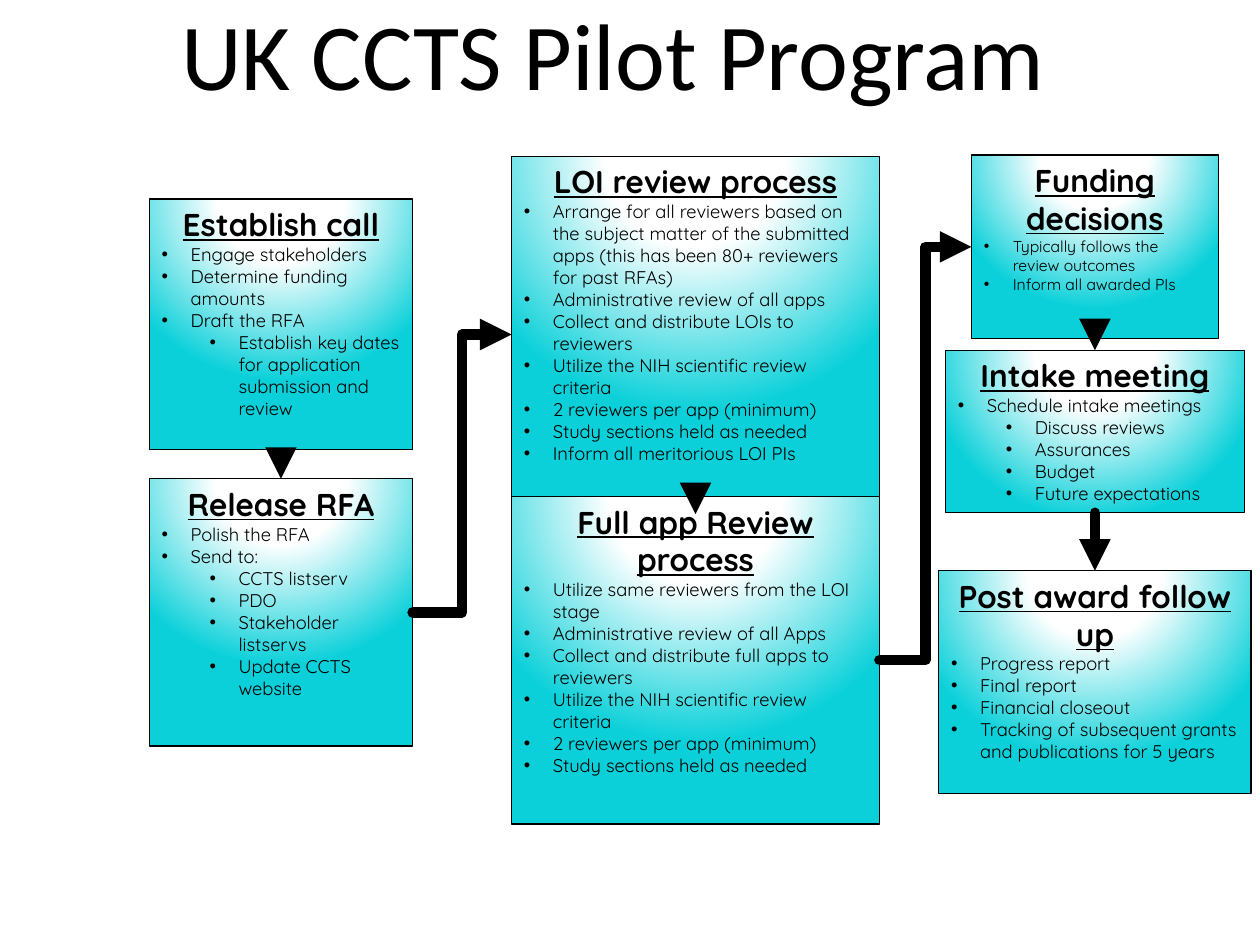
from dataclasses import dataclass

import lxml.etree
import pptx
import pptx.dml.color
import pptx.enum.shapes
import pptx.enum.text
import pptx.oxml
import pptx.oxml.ns
import pptx.util

Align = pptx.enum.text.PP_ALIGN
Anchor = pptx.enum.text.MSO_ANCHOR
Connector = pptx.enum.shapes.MSO_CONNECTOR
BOTTOM, RIGHT, TOP, LEFT = 2, 3, 0, 1


@dataclass(frozen=True)
class Theme:
    ink: str = "000000"
    glow: str = "FFFFFF"
    edge: str = "0BD0D9"
    title_font: str = "Calibri"
    card_font: str = "Quicksand"
    title_size: float = 54
    heading_size: float = 18
    body_size: float = 10.5
    small_size: float = 9
    outline: float = 0.75
    arrow: float = 6


class FlowSlide:
    """Draws on a slide divided into 100 columns and 75 rows."""

    columns, rows = 100, 75

    def __init__(self, deck, theme):
        self.theme = theme
        self.column = deck.slide_width / self.columns
        self.row = deck.slide_height / self.rows
        self.shapes = deck.slides.add_slide(deck.slide_layouts[6]).shapes

    def across(self, count):
        return pptx.util.Emu(round(count * self.column))

    def down(self, count):
        return pptx.util.Emu(round(count * self.row))

    def frame(self, left, top, width, height):
        return self.across(left), self.down(top), self.across(width), self.down(height)

    def color(self, value):
        return pptx.dml.color.RGBColor.from_string(value)

    def style(self, para, font, size, strong=False):
        para.font.name = font
        para.font.size = pptx.util.Pt(size)
        para.font.bold = para.font.underline = strong
        para.font.color.rgb = self.color(self.theme.ink)

    def title(self, text, left, top, width, height):
        box = self.shapes.add_textbox(*self.frame(left, top, width, height))
        frame = box.text_frame
        frame.word_wrap = True
        frame.vertical_anchor = Anchor.BOTTOM
        frame.margin_bottom = 0
        para = frame.paragraphs[0]
        para.text = text
        para.alignment = Align.CENTER
        self.style(para, self.theme.title_font, self.theme.title_size)

    def glow_fill(self, shape):
        """Radial glow centred above the top edge of the card."""
        shape.fill.gradient()
        stops = ((0, self.theme.glow), (35, self.theme.glow), (100, self.theme.edge))
        stop_xml = "".join(
            f'<a:gs pos="{share * 1000}"><a:srgbClr val="{value}"/></a:gs>'
            for share, value in stops)
        glow = pptx.oxml.parse_xml(
            f'<a:gradFill {pptx.oxml.ns.nsdecls("a")} rotWithShape="1">'
            f'<a:gsLst>{stop_xml}</a:gsLst><a:path path="circle">'
            '<a:fillToRect l="50000" t="-80000" r="50000" b="180000"/>'
            '</a:path></a:gradFill>')
        properties = shape._element.spPr
        properties.replace(properties.find(pptx.oxml.ns.qn("a:gradFill")), glow)

    def bullet(self, para, level):
        para.level = level
        para.alignment = Align.LEFT
        properties = para._p.get_or_add_pPr()
        properties.set("marL", str(self.across((2.3, 6.1)[level])))
        properties.set("indent", str(-self.across(2.3)))
        qn = pptx.oxml.ns.qn
        lxml.etree.SubElement(properties, qn("a:buFont"), typeface="Arial")
        lxml.etree.SubElement(properties, qn("a:buChar"), char="•")

    def card(self, heading, items, center, top, width, height, size=None):
        """Heading over a bullet list; a nested list holds second-level items."""
        box = self.shapes.add_shape(
            pptx.enum.shapes.MSO_SHAPE.RECTANGLE,
            *self.frame(center - width / 2, top, width, height))
        box.shadow.inherit = False
        self.glow_fill(box)
        box.line.color.rgb = self.color(self.theme.ink)
        box.line.width = pptx.util.Pt(self.theme.outline)
        frame = box.text_frame
        frame.word_wrap = True
        frame.vertical_anchor = Anchor.TOP
        para = frame.paragraphs[0]
        para.text = heading
        para.alignment = Align.CENTER
        self.style(para, self.theme.card_font, self.theme.heading_size, strong=True)
        for item in items:
            nested = isinstance(item, list)
            for text in item if nested else [item]:
                para = frame.add_paragraph()
                para.text = text
                self.bullet(para, int(nested))
                self.style(para, self.theme.card_font, size or self.theme.body_size)
        return box

    def arrow(self, kind, start=(0, 0), end=(0, 0)):
        line = self.shapes.add_connector(
            kind, self.across(start[0]), self.down(start[1]),
            self.across(end[0]), self.down(end[1]))
        line.line.color.rgb = self.color(self.theme.ink)
        line.line.width = pptx.util.Pt(self.theme.arrow)
        qn = pptx.oxml.ns.qn
        outline = line.line._get_or_add_ln()
        outline.set("cap", "rnd")
        lxml.etree.SubElement(outline, qn("a:round"))
        lxml.etree.SubElement(outline, qn("a:tailEnd"), type="triangle")
        lxml.etree.SubElement(line._element.spPr, qn("a:effectLst"))
        return line

    def join(self, first, first_side, second, second_side, kind=Connector.STRAIGHT):
        line = self.arrow(kind)
        line.begin_connect(first, first_side)
        line.end_connect(second, second_side)


def main():
    deck = pptx.Presentation()
    deck.slide_width = pptx.util.Inches(10)
    deck.slide_height = pptx.util.Inches(7.5)
    theme = Theme()
    page = FlowSlide(deck, theme)
    page.title("UK CCTS Pilot Program", 2.4, -11.3, 92.5, 20)

    # Call stage
    call_center, review_center, award_center = 22.3, 55.2, 86.9
    establish = page.card("Establish call", [
        "Engage stakeholders", "Determine funding amounts", "Draft the RFA",
        ["Establish key dates for application submission and review"],
    ], call_center, 15.8, 20.9, 19.9)
    release = page.card("Release RFA", [
        "Polish the RFA", "Send to:",
        ["CCTS listserv", "PDO", "Stakeholder listservs", "Update CCTS website"],
    ], call_center, 38, 20.9, 21.2)

    # Review stage
    shared_steps = ["Utilize the NIH scientific review criteria",
                    "2 reviewers per app (minimum)", "Study sections held as needed"]
    letters = page.card("LOI review process", [
        "Arrange for all reviewers based on the subject matter of the submitted "
        "apps (this has been 80+ reviewers for past RFAs)",
        "Administrative review of all apps",
        "Collect and distribute LOIs to reviewers",
        *shared_steps, "Inform all meritorious LOI PIs",
    ], review_center, 12.4, 29.2, 28.3)
    full_review = page.card("Full app Review process", [
        "Utilize same reviewers from the LOI stage",
        "Administrative review of all Apps",
        "Collect and distribute full apps to reviewers",
        *shared_steps,
    ], review_center, 39.4, 29.2, 26)

    # Award stage
    funding = page.card("Funding decisions", [
        "Typically follows the review outcomes", "Inform all awarded PIs",
    ], award_center, 12.3, 19.6, 14.6, theme.small_size)
    intake = page.card("Intake meeting", [
        "Schedule intake meetings",
        ["Discuss reviews", "Assurances", "Budget", "Future expectations"],
    ], award_center, 27.8, 23.7, 12.9)
    follow_up = page.card("Post award follow up", [
        "Progress report", "Final report", "Financial closeout",
        "Tracking of subsequent grants and publications for 5 years",
    ], award_center, 45.3, 24.8, 17.7)

    # Flow between cards
    page.join(establish, BOTTOM, release, TOP)
    page.join(release, RIGHT, letters, LEFT, Connector.ELBOW)
    page.join(full_review, RIGHT, funding, LEFT, Connector.ELBOW)
    page.join(funding, BOTTOM, intake, TOP)
    page.join(intake, BOTTOM, follow_up, TOP)
    page.arrow(Connector.STRAIGHT, (review_center, 38.5), (review_center, 40.8))

    deck.save("out.pptx")


if __name__ == "__main__":
    main()
